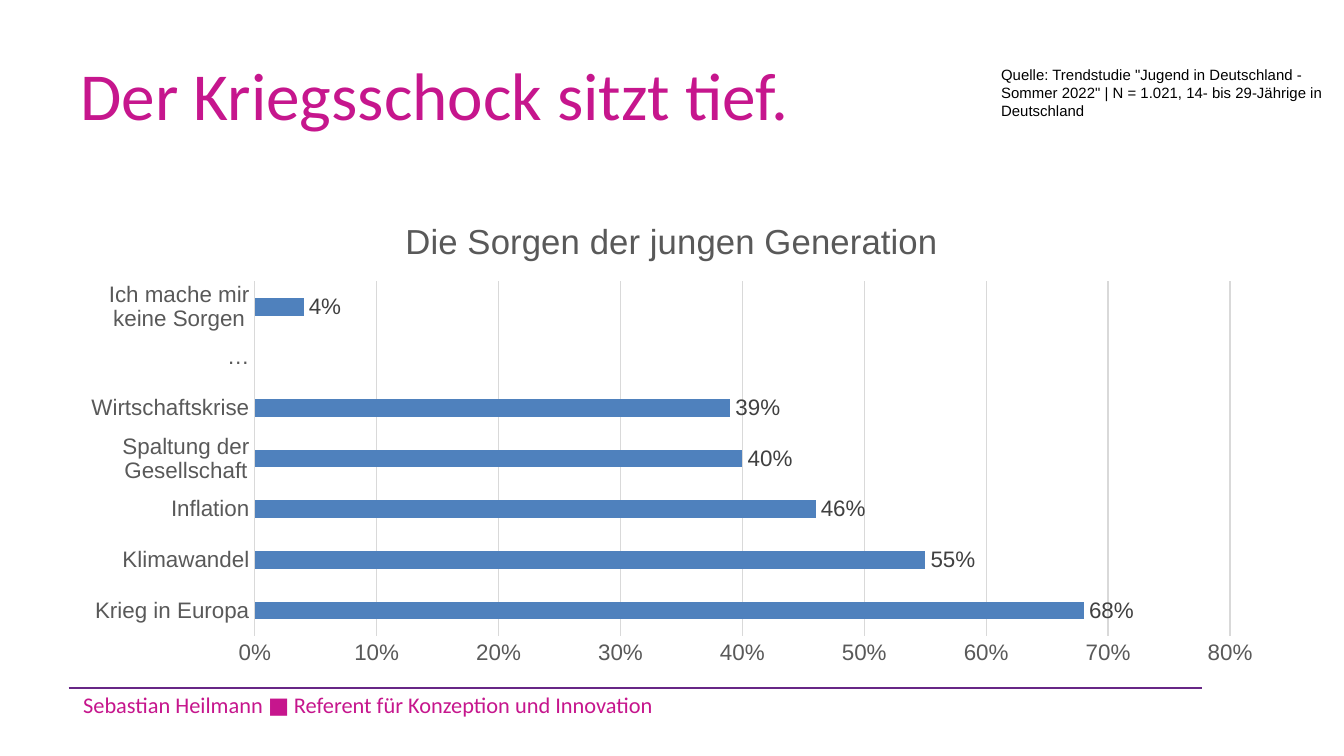
from lxml import etree
from pptx import Presentation
from pptx.chart import data as chart_data
from pptx.dml.color import RGBColor
from pptx.enum import chart as ec, shapes, text
from pptx.oxml import ns
from pptx.util import Inches, Pt

MAGENTA = RGBColor(0xC6, 0x16, 0x8D)
PURPLE = RGBColor(0x67, 0x26, 0x86)
BLUE = RGBColor(0x4F, 0x81, 0xBD)
BLACK = RGBColor(0, 0, 0)
DARK_GREY = RGBColor(0x40, 0x40, 0x40)
GREY = RGBColor(0x59, 0x59, 0x59)
LIGHT_GREY = RGBColor(0xD9, 0xD9, 0xD9)

HEADING = "Die Sorgen der jungen Generation"
WORRIES = {
    "Krieg in Europa": 0.68,
    "Klimawandel": 0.55,
    "Inflation": 0.46,
    "Spaltung der Gesellschaft": 0.4,
    "Wirtschaftskrise": 0.39,
    "…": None,
    "Ich mache mir keine Sorgen": 0.04,
}


def style_font(font, size, color, name="Arial"):
    font.name = name
    font.size = Pt(size)
    font.bold = False
    font.color.rgb = color


def write_text(frame, content, size, color, name="Arial",
               anchor=text.MSO_ANCHOR.TOP):
    frame.word_wrap = True
    frame.vertical_anchor = anchor
    para = frame.paragraphs[0]
    para.alignment = text.PP_ALIGN.LEFT
    span = para.add_run()
    span.text = content
    style_font(span.font, size, color, name)


def place_title(page, left, top, width, height):
    title = page.shapes.title
    title.left, title.top = Inches(left), Inches(top)
    title.width, title.height = Inches(width), Inches(height)
    write_text(title.text_frame, "Der Kriegsschock sitzt tief.", 36, MAGENTA,
               "Calibri", text.MSO_ANCHOR.MIDDLE)


def place_source(page, left, top, width, height):
    box = page.shapes.add_textbox(Inches(left), Inches(top),
                                  Inches(width), Inches(height))
    write_text(box.text_frame,
               'Quelle: Trendstudie "Jugend in Deutschland - Sommer 2022" | '
               "N = 1.021, 14- bis 29-Jährige in Deutschland", 8, BLACK)


def place_footer(page, left, top, width, height):
    rule = page.shapes.add_connector(
        shapes.MSO_CONNECTOR.STRAIGHT, Inches(left), Inches(top),
        Inches(left + width), Inches(top))
    rule.line.color.rgb = PURPLE
    rule.line.width = Pt(1)
    etree.SubElement(rule._element.spPr, ns.qn("a:effectLst"))
    box = page.shapes.add_textbox(Inches(left + 0.01), Inches(top - 0.04),
                                  Inches(5.11), Inches(height))
    write_text(box.text_frame,
               "Sebastian Heilmann ■ Referent für Konzeption und Innovation",
               12, MAGENTA, "Calibri", text.MSO_ANCHOR.MIDDLE)


def style_axis(axis):
    style_font(axis.tick_labels.font, 12, GREY)
    axis.major_tick_mark = ec.XL_TICK_MARK.NONE
    axis.minor_tick_mark = ec.XL_TICK_MARK.NONE


def place_chart(page, left, top, width, height):
    data = chart_data.CategoryChartData(number_format="0%")
    data.categories = list(WORRIES)
    data.add_series(HEADING, list(WORRIES.values()))
    chart = page.shapes.add_chart(
        ec.XL_CHART_TYPE.BAR_CLUSTERED, Inches(left), Inches(top),
        Inches(width), Inches(height), data).chart
    style_font(chart.font, 10, BLACK)
    chart.has_legend = False
    chart.has_title = True
    frame = chart.chart_title.text_frame
    frame.text = HEADING
    style_font(frame.paragraphs[0].runs[0].font, 18.6, GREY)

    categories, values = chart.category_axis, chart.value_axis
    style_axis(categories)
    categories.format.line.color.rgb = LIGHT_GREY
    categories.format.line.width = Pt(0.75)
    style_axis(values)
    values.format.line.fill.background()
    values.minimum_scale, values.maximum_scale = 0, 0.8
    values.major_unit = 0.1
    values.tick_labels.number_format = "0%"
    values.tick_labels.number_format_is_linked = False
    values.major_gridlines.format.line.color.rgb = LIGHT_GREY
    values.major_gridlines.format.line.width = Pt(0.75)

    plot = chart.plots[0]
    plot.gap_width = 182
    plot.vary_by_categories = False
    bars = plot.series[0]
    bars.format.fill.solid()
    bars.format.fill.fore_color.rgb = BLUE
    labels = bars.data_labels
    labels.show_value = True
    labels.number_format = "0%"
    labels.number_format_is_linked = False
    labels.position = ec.XL_LABEL_POSITION.OUTSIDE_END
    style_font(labels.font, 12, DARK_GREY)


def main():
    deck = Presentation()
    deck.slide_width = Inches(10)
    deck.slide_height = deck.slide_width * 9 // 16
    page = deck.slides.add_slide(deck.slide_layouts.get_by_name("Title Only"))
    place_footer(page, 0.51, 5.12, 8.43, 0.33)
    place_title(page, 0.5, 0.23, 9, 0.94)
    place_chart(page, 0.5, 1.45, 9, 3.57)
    place_source(page, 7.35, 0.44, 2.68, 0.5)
    deck.save("out.pptx")


if __name__ == "__main__":
    main()
